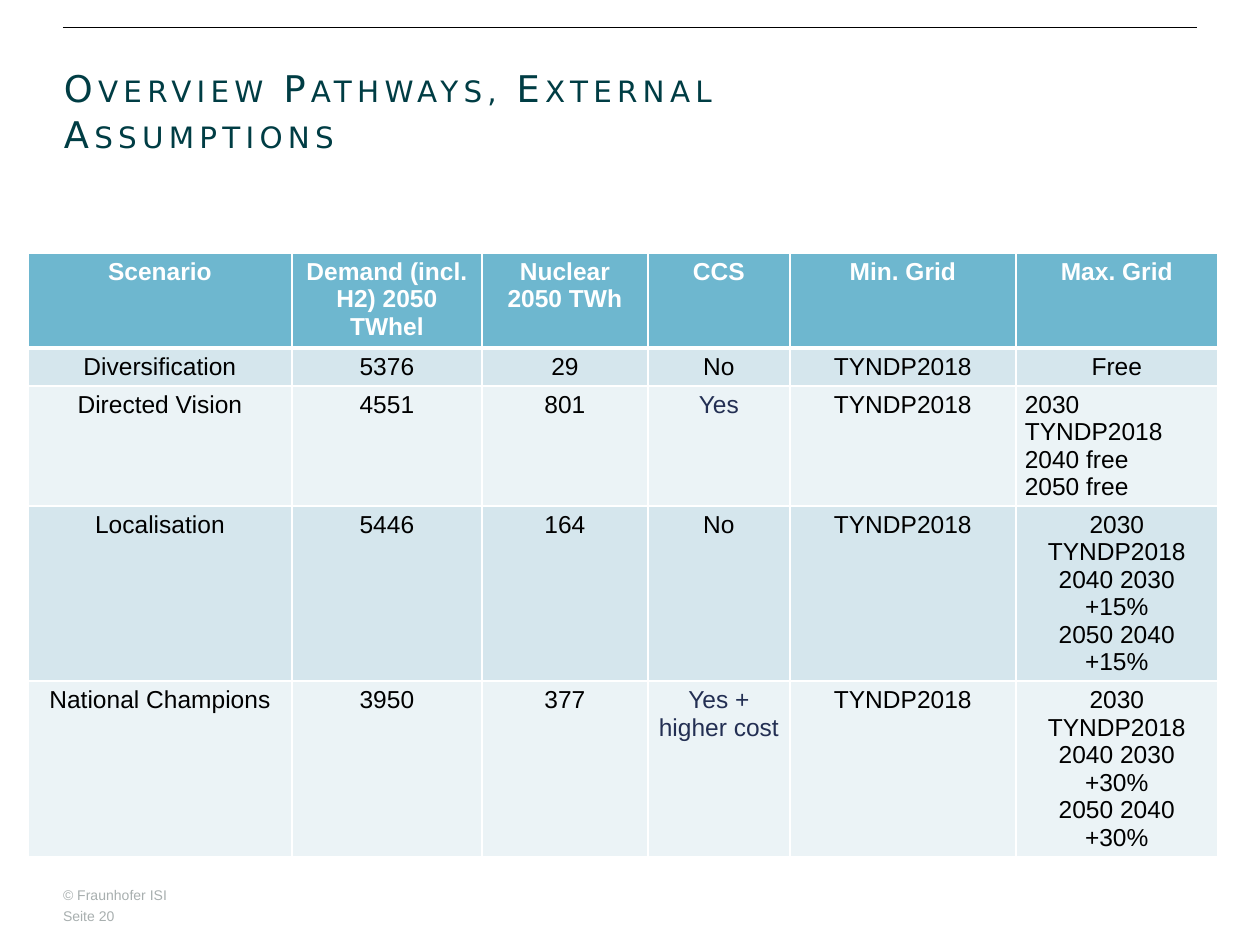
from lxml import etree
from pptx import Presentation
from pptx.dml.color import RGBColor
from pptx.enum import shapes, text
from pptx.oxml.ns import qn
from pptx.util import Pt

# Content
TITLE = "Overview Pathways, External Assumptions"
HEADER = ["Scenario", "Demand (incl. H2) 2050\nTWhel", "Nuclear\n2050 TWh",
          "CCS", "Min. Grid", "Max. Grid"]
SCENARIOS = [
    ["Diversification", "5376", "29", "No", "TYNDP2018", "Free"],
    ["Directed Vision", "4551", "801", "Yes", "TYNDP2018",
     "2030 TYNDP2018\n2040 free\n2050 free"],
    ["Localisation", "5446", "164", "No", "TYNDP2018",
     "2030 TYNDP2018\n2040 2030 +15%\n2050 2040 +15%"],
    ["National Champions", "3950", "377", "Yes + higher cost", "TYNDP2018",
     "2030 TYNDP2018\n2040 2030 +30%\n2050 2040 +30%"],
]
LEFT_ALIGNED = {(2, 5)}
FOOTER = ["© Fraunhofer ISI", "Seite 20"]

# Measures in px, 126 to the inch
PX = 914400 // 126
COLUMNS = [264, 190, 166, 142, 226, 202]
ROWS = [95, 38, 119, 175, 175]

WHITE = RGBColor(0xFF, 0xFF, 0xFF)
BLACK = RGBColor(0, 0, 0)
TEAL = RGBColor(0x00, 0x3D, 0x44)
NAVY = RGBColor(0x23, 0x2F, 0x53)
GREY = RGBColor(0xA8, 0xAF, 0xAF)
HEADER_FILL = RGBColor(0x6E, 0xB7, 0xCF)
BAND_FILLS = [RGBColor(0xD5, 0xE6, 0xED), RGBColor(0xEB, 0xF3, 0xF6)]


def px(*lengths):
    return [length * PX for length in lengths]


def style(paragraph, font_name, size, color, bold=False):
    for run in paragraph.runs:
        run.font.name = font_name
        run.font.size = Pt(size)
        run.font.bold = bold
        run.font.color.rgb = color


def clear_margins(frame):
    frame.margin_left = frame.margin_top = 0
    frame.margin_right = frame.margin_bottom = 0
    frame.word_wrap = True


def add_borders(cell, widths):
    properties = cell._tc.get_or_add_tcPr()
    for side, width in zip("LRTB", widths):
        line = etree.SubElement(properties, qn(f"a:ln{side}"), w=str(Pt(width)))
        fill = etree.SubElement(line, qn("a:solidFill"))
        etree.SubElement(fill, qn("a:srgbClr"), val=str(WHITE))


prs = Presentation()
prs.slide_width, prs.slide_height = px(1260, 945)
slide = prs.slides.add_slide(prs.slide_layouts[5])

# Rule above the title
rule = slide.shapes.add_connector(shapes.MSO_CONNECTOR.STRAIGHT, *px(63, 27, 1197, 27))
rule.line.color.rgb = BLACK
rule.line.width = Pt(0.4)
etree.SubElement(rule._element.spPr, qn("a:effectLst"))

# Title in spaced small capitals
title = slide.shapes.title
title.left, title.top, title.width, title.height = px(64, 45, 864, 129)
heading = title.text_frame
heading.text = TITLE
clear_margins(heading)
heading.auto_size = text.MSO_AUTO_SIZE.NONE
heading.vertical_anchor = text.MSO_ANCHOR.MIDDLE
heading_line = heading.paragraphs[0]
heading_line.alignment = text.PP_ALIGN.LEFT
heading_line.line_spacing = 1.05
style(heading_line, "DejaVu Sans", 21, TEAL)
for run in heading_line.runs:
    run_properties = run._r.get_or_add_rPr()
    run_properties.set("cap", "small")
    run_properties.set("spc", "300")

# Scenario table
table = slide.shapes.add_table(
    len(ROWS), len(COLUMNS), *px(28, 253, sum(COLUMNS), sum(ROWS))).table
for column, width in zip(table.columns, COLUMNS):
    column.width = width * PX
for row, height in zip(table.rows, ROWS):
    row.height = height * PX

for r, entries in enumerate([HEADER, *SCENARIOS]):
    is_header = r == 0
    for c, entry in enumerate(entries):
        cell = table.cell(r, c)
        cell.text_frame.text = entry
        cell.margin_left = cell.margin_right = 9 * PX
        cell.margin_top = cell.margin_bottom = 5 * PX
        add_borders(cell, (1, 1, 3 if r == 1 else 1, 3 if is_header else 1))
        cell.fill.solid()
        cell.fill.fore_color.rgb = HEADER_FILL if is_header else BAND_FILLS[(r - 1) % 2]
        color = WHITE if is_header else NAVY if entry.startswith("Yes") else BLACK
        for paragraph in cell.text_frame.paragraphs:
            paragraph.alignment = (text.PP_ALIGN.LEFT if (r, c) in LEFT_ALIGNED
                                   else text.PP_ALIGN.CENTER)
            style(paragraph, "Arial", 14, color, bold=is_header)

# Footer lines
for i, line in enumerate(FOOTER):
    footer = slide.shapes.add_textbox(*px(63, 887 + 21 * i, 248, 16)).text_frame
    footer.text = line
    clear_margins(footer)
    style(footer.paragraphs[0], "Arial", 8, GREY)

prs.save("out.pptx")
